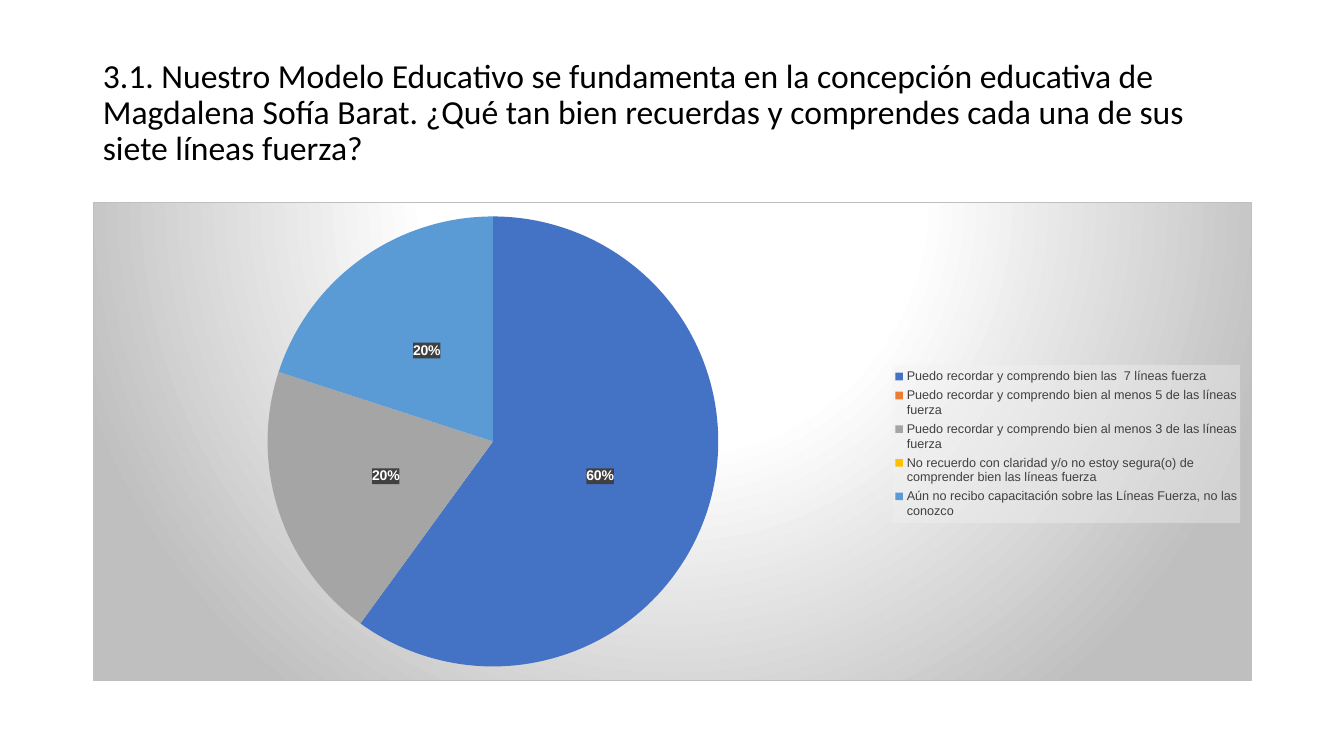
import lxml.etree
import pptx
import pptx.chart.data
import pptx.dml.color
import pptx.enum.chart
import pptx.enum.text
import pptx.util

Inches = pptx.util.Inches
A = "http://schemas.openxmlformats.org/drawingml/2006/main"
C = "http://schemas.openxmlformats.org/drawingml/2006/chart"

TITLE = (
    "3.1. Nuestro Modelo Educativo se fundamenta en la concepción educativa de "
    "Magdalena Sofía Barat. ¿Qué tan bien recuerdas y comprendes cada una de sus "
    "siete líneas fuerza?"
)
# Answer, percentage, slice colour
ANSWERS = [
    ("Puedo recordar y comprendo bien las  7 líneas fuerza", 60, "4472C4"),
    ("Puedo recordar y comprendo bien al menos 5 de las líneas fuerza", 0, "ED7D31"),
    ("Puedo recordar y comprendo bien al menos 3 de las líneas fuerza", 20, "A5A5A5"),
    ("No recuerdo con claridad y/o no estoy segura(o) de comprender bien "
     "las líneas fuerza", 0, "FFC000"),
    ("Aún no recibo capacitación sobre las Líneas Fuerza, no las conozco",
     20, "5B9BD5"),
]


def paint(part, color):
    """Give a font or a fill a hex colour."""
    if hasattr(part, "solid"):
        part.solid()
        part = part.fore_color
    else:
        part = part.color
    part.rgb = pptx.dml.color.RGBColor.from_string(color)


def style(part, values):
    for name, value in values.items():
        setattr(part, name, value)


def write(font, name, size, color, bold=False):
    style(font, {"name": name, "size": pptx.util.Pt(size), "bold": bold})
    paint(font, color)


def node(tag, inner):
    """Build one chart element from its inner XML."""
    return lxml.etree.fromstring(
        f'<c:{tag} xmlns:c="{C}" xmlns:a="{A}">{inner}</c:{tag}>')


def find(parent, tag):
    return parent.find(f"{{{C}}}{tag}")


def frame(x, y, w, h, inner=False):
    """Build a layout from fractions of the chart."""
    target = '<c:layoutTarget val="inner"/>' if inner else ""
    modes = '<c:xMode val="edge"/><c:yMode val="edge"/>'
    sizes = "".join(f'<c:{key} val="{val}"/>' for key, val in zip("xywh", (x, y, w, h)))
    return node("layout", f"<c:manualLayout>{target}{modes}{sizes}</c:manualLayout>")


def glass(color, alpha):
    """Build a see-through fill."""
    return node("spPr", f'<a:solidFill><a:srgbClr val="{color}">'
                        f'<a:alpha val="{alpha * 1000}"/></a:srgbClr></a:solidFill>')


def drop(parent, *tags):
    for tag in tags:
        old = find(parent, tag)
        if old is not None:
            parent.remove(old)


def add_title(slide, x, y, w, h):
    title = slide.shapes.title
    style(title, {"left": x, "top": y, "width": w, "height": h})
    text = title.text_frame
    text.text = TITLE
    style(text, {
        "word_wrap": True,
        "auto_size": pptx.enum.text.MSO_AUTO_SIZE.NONE,
        "vertical_anchor": pptx.enum.text.MSO_ANCHOR.MIDDLE,
        "margin_left": Inches(0.1), "margin_right": Inches(0.1),
        "margin_top": Inches(0.05), "margin_bottom": Inches(0.05),
    })
    line = text.paragraphs[0]
    style(line, {"alignment": pptx.enum.text.PP_ALIGN.LEFT, "line_spacing": 0.9})
    write(line.runs[0].font, "Calibri", 24, "000000")


def add_back(chart):
    """Radial grey backdrop with a thin border."""
    stops = "".join(
        f'<a:gs pos="{pos * 1000}"><a:srgbClr val="{color}"/></a:gs>'
        for pos, color in ((0, "FFFFFF"), (39, "FFFFFF"), (100, "BFBFBF")))
    back = node("spPr", (
        f'<a:gradFill><a:gsLst>{stops}</a:gsLst><a:path path="circle">'
        '<a:fillToRect l="50000" t="-80000" r="50000" b="180000"/></a:path></a:gradFill>'
        '<a:ln w="9525"><a:solidFill><a:srgbClr val="BFBFBF"/></a:solidFill></a:ln>'))
    space = chart._chartSpace
    drop(space, "spPr")
    find(space, "chart").addnext(back)


def add_key(chart):
    chart.has_legend = True
    key = chart.legend
    style(key, {"position": pptx.enum.chart.XL_LEGEND_POSITION.RIGHT,
                "include_in_layout": False})
    write(key.font, "Arial", 9, "404040")
    root = key._element
    drop(root, "layout", "spPr")
    over = find(root, "overlay")
    over.addprevious(frame(0.69, 0.34, 0.3, 0.33))
    over.addnext(glass("F2F2F2", 39))


def add_labels(series):
    labels = series.data_labels
    style(labels, {
        "show_percentage": True, "show_value": False,
        "number_format": "0%", "number_format_is_linked": False,
        "position": pptx.enum.chart.XL_LABEL_POSITION.CENTER,
    })
    write(labels.font, "Arial", 10, "FFFFFF", True)
    root = labels._element
    drop(root, "spPr")
    find(root, "txPr").addprevious(glass("404040", 90))
    # Empty slices carry no label
    blank = [i for i, (_, share, _) in enumerate(ANSWERS) if share == 0]
    for place, i in enumerate(blank):
        root.insert(place, node("dLbl", f'<c:idx val="{i}"/><c:delete val="1"/>'))


def add_pie(slide, x, y, w, h):
    data = pptx.chart.data.CategoryChartData()
    data.categories = [name for name, _, _ in ANSWERS]
    data.add_series("Series 1", [share for _, share, _ in ANSWERS])
    kind = pptx.enum.chart.XL_CHART_TYPE.PIE
    chart = slide.shapes.add_chart(kind, x, y, w, h, data).chart
    chart.has_title = False
    write(chart.font, "Arial", 10, "000000")
    add_back(chart)
    # Slices
    plot = chart.plots[0]
    plot.vary_by_categories = True
    series = plot.series[0]
    for i, (_, _, color) in enumerate(ANSWERS):
        paint(series.points[i].format.fill, color)
    add_labels(series)
    area = find(find(chart._chartSpace, "chart"), "plotArea")
    drop(area, "layout")
    area.insert(0, frame(0.15, 0.03, 0.39, 0.94, True))
    add_key(chart)


def main():
    deck = pptx.Presentation()
    style(deck, {"slide_width": Inches(13.33), "slide_height": Inches(7.5)})
    slide = deck.slides.add_slide(deck.slide_layouts[5])
    left, width = Inches(0.92), Inches(11.5)
    add_title(slide, left, Inches(0.4), width, Inches(1.45))
    add_pie(slide, left, Inches(2), width, Inches(4.76))
    deck.save("out.pptx")


if __name__ == "__main__":
    main()
